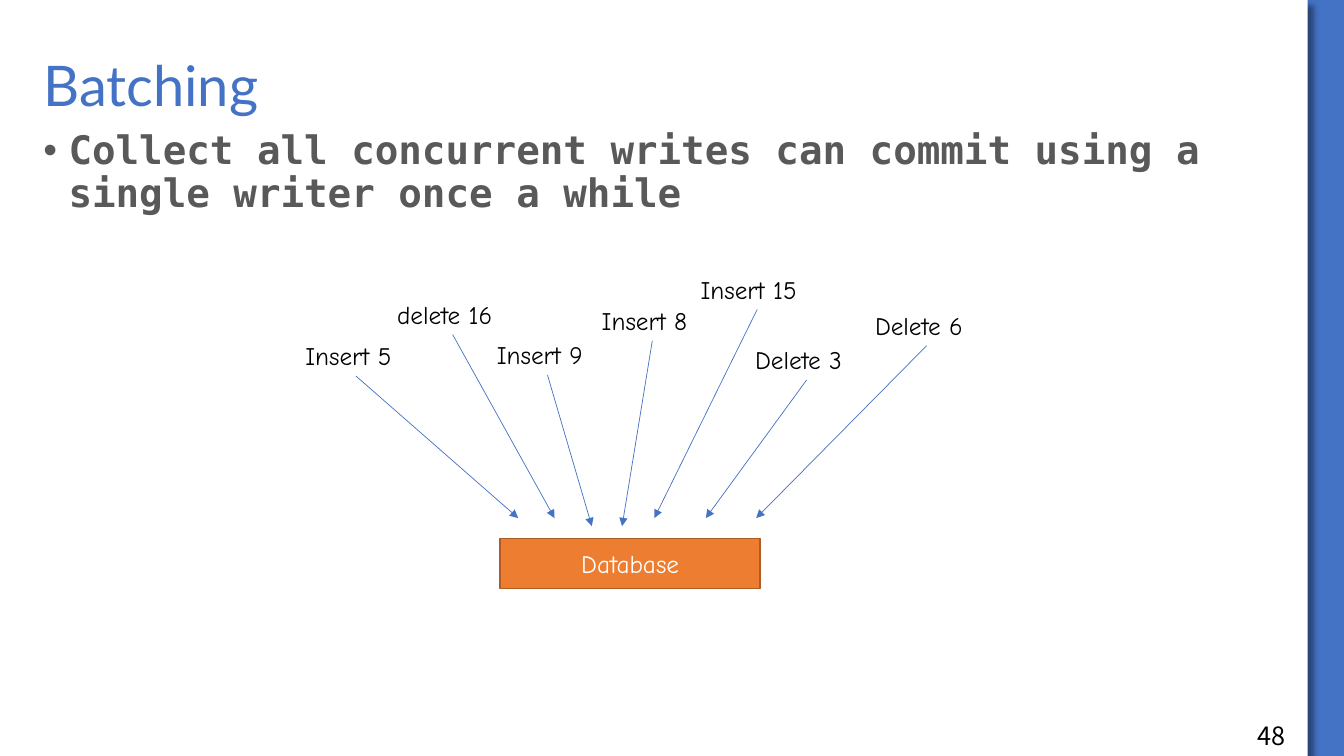
from dataclasses import dataclass

from lxml import etree
from pptx import Presentation
from pptx import util as u
from pptx.dml import color
from pptx.enum import shapes, text
from pptx.oxml import ns, parse_xml


@dataclass(frozen=True)
class Theme:
    blue: str = "4472C4"
    orange: str = "ED7D31"
    rust: str = "AF5C24"
    gray: str = "595959"
    black: str = "000000"
    white: str = "FFFFFF"
    title_font: str = "Lato"
    body_font: str = "DejaVu Sans Mono"
    label_font: str = "Comic Neue"
    number_font: str = "Noto Sans CJK SC"
    title_size: int = 40
    body_size: int = 28
    label_size: int = 18


THEME = Theme()
LABEL_HEIGHT = 0.4

# wording, label left, top and width, arrow tip, all within the diagram
WRITES = [
    ("Insert 5", (0, 0.66, 1.2), (2.21, 2.47)),
    ("delete 16", (0.91, 0.25, 1.3), (2.57, 2.47)),
    ("Insert 9", (1.9, 0.65, 1.2), (2.94, 2.55)),
    ("Insert 8", (2.94, 0.31, 1.2), (3.24, 2.55)),
    ("Insert 15", (3.92, 0, 1.32), (3.56, 2.47)),
    ("Delete 3", (4.46, 0.7, 1.22), (4.07, 2.47)),
    ("Delete 6", (5.65, 0.36, 1.22), (4.57, 2.47)),
]


def rgb(value):
    return color.RGBColor.from_string(value)


def place(shape, left, top, width, height):
    shape.left, shape.top = u.Inches(left), u.Inches(top)
    shape.width, shape.height = u.Inches(width), u.Inches(height)


def write(shape, words, *, font, size, ink, bold=False, spacing=None, before=0,
          align=text.PP_ALIGN.LEFT, anchor=text.MSO_ANCHOR.TOP, wrap=True,
          fit=text.MSO_AUTO_SIZE.NONE):
    """Put one formatted paragraph in the shape and return it."""
    frame = shape.text_frame
    frame.word_wrap = wrap
    frame.auto_size = fit
    frame.vertical_anchor = anchor
    para = frame.paragraphs[0]
    para.alignment = align
    para.space_before = u.Pt(before)
    if spacing:
        para.line_spacing = spacing
    span = para.add_run()
    span.text = words
    span.font.name, span.font.size = font, u.Pt(size)
    span.font.bold = bold
    span.font.color.rgb = rgb(ink)
    return para


def add_bullet(para, indent):
    properties = para._p.get_or_add_pPr()
    properties.set("marL", str(u.Inches(indent)))
    properties.set("indent", str(-u.Inches(indent)))
    font = etree.SubElement(properties, ns.qn("a:buFont"))
    font.set("typeface", "Arial")
    mark = etree.SubElement(properties, ns.qn("a:buChar"))
    mark.set("char", "•")


def add_shadow(shape):
    shape._element.spPr.append(parse_xml(
        f'<a:effectLst {ns.nsdecls("a")}>'
        f'<a:outerShdw blurRad="{u.Pt(4)}" dist="{u.Pt(6)}" dir="2700000" algn="tl" rotWithShape="0">'
        f'<a:srgbClr val="{THEME.black}"><a:alpha val="40000"/></a:srgbClr>'
        '</a:outerShdw></a:effectLst>'))


def add_panel(page, left, top, width, height):
    """White sheet over the blue background, sent behind everything else."""
    background = page.background.fill
    background.solid()
    background.fore_color.rgb = rgb(THEME.blue)
    panel = page.shapes.add_shape(shapes.MSO_SHAPE.RECTANGLE, 0, 0, 0, 0)
    place(panel, left, top, width, height)
    panel.fill.solid()
    panel.fill.fore_color.rgb = rgb(THEME.white)
    panel.line.fill.background()
    add_shadow(panel)
    page.shapes._spTree.remove(panel._element)
    page.shapes._spTree.insert(2, panel._element)


def add_heading(page, left, top, width, height):
    title, body = page.placeholders
    title_height = 0.75
    place(title, left, top, width, title_height)
    write(title, "Batching", font=THEME.title_font, size=THEME.title_size,
          ink=THEME.blue, spacing=0.9, anchor=text.MSO_ANCHOR.MIDDLE)
    place(body, left, top + title_height, width, height - title_height)
    para = write(
        body, "Collect all concurrent writes can commit using a single writer once a while",
        font=THEME.body_font, size=THEME.body_size, ink=THEME.gray,
        bold=True, spacing=0.9, before=6)
    add_bullet(para, 0.25)


def add_label(page, words, left, top, width, font=THEME.label_font, **options):
    label = page.shapes.add_textbox(0, 0, 0, 0)
    place(label, left, top, width, LABEL_HEIGHT)
    write(label, words, font=font, size=THEME.label_size, ink=THEME.black, **options)


def add_arrow(page, start, tip):
    ends = [u.Inches(value) for value in (*start, *tip)]
    arrow = page.shapes.add_connector(shapes.MSO_CONNECTOR.STRAIGHT, *ends)
    arrow.line.color.rgb = rgb(THEME.blue)
    arrow.line.width = u.Pt(0.5)
    head = etree.SubElement(arrow.line._get_or_add_ln(), ns.qn("a:tailEnd"))
    head.set("type", "triangle")
    etree.SubElement(arrow._element.spPr, ns.qn("a:effectLst"))


def add_database(page, left, top, width, height):
    database = page.shapes.add_shape(shapes.MSO_SHAPE.RECTANGLE, 0, 0, 0, 0)
    place(database, left, top, width, height)
    database.shadow.inherit = False
    database.fill.solid()
    database.fill.fore_color.rgb = rgb(THEME.orange)
    database.line.color.rgb = rgb(THEME.rust)
    database.line.width = u.Pt(1)
    write(database, "Database", font=THEME.label_font, size=THEME.label_size,
          ink=THEME.white, align=text.PP_ALIGN.CENTER, anchor=text.MSO_ANCHOR.MIDDLE)


def add_diagram(page, left, top):
    """Write requests, each with an arrow from its bottom centre to the database."""
    for words, (x, y, width), (tip_x, tip_y) in WRITES:
        x, y = left + x, top + y
        add_arrow(page, (x + width / 2, y + LABEL_HEIGHT), (left + tip_x, top + tip_y))
        add_label(page, words, x, y, width, wrap=False,
                  fit=text.MSO_AUTO_SIZE.SHAPE_TO_FIT_TEXT)
    add_database(page, left + 2.03, top + 2.67, 2.58, 0.5)


def main():
    deck = Presentation()
    deck.slide_width, deck.slide_height = u.Inches(13.33), u.Inches(7.5)
    page = deck.slides.add_slide(deck.slide_layouts[1])
    add_panel(page, 0, 0, 12.97, 7.5)
    add_heading(page, 0.33, 0.5, 12.33, 2.75)
    add_label(page, "48", 12.37, 7.1, 0.86, font=THEME.number_font)
    add_diagram(page, 2.93, 2.67)
    deck.save("out.pptx")


if __name__ == "__main__":
    main()
